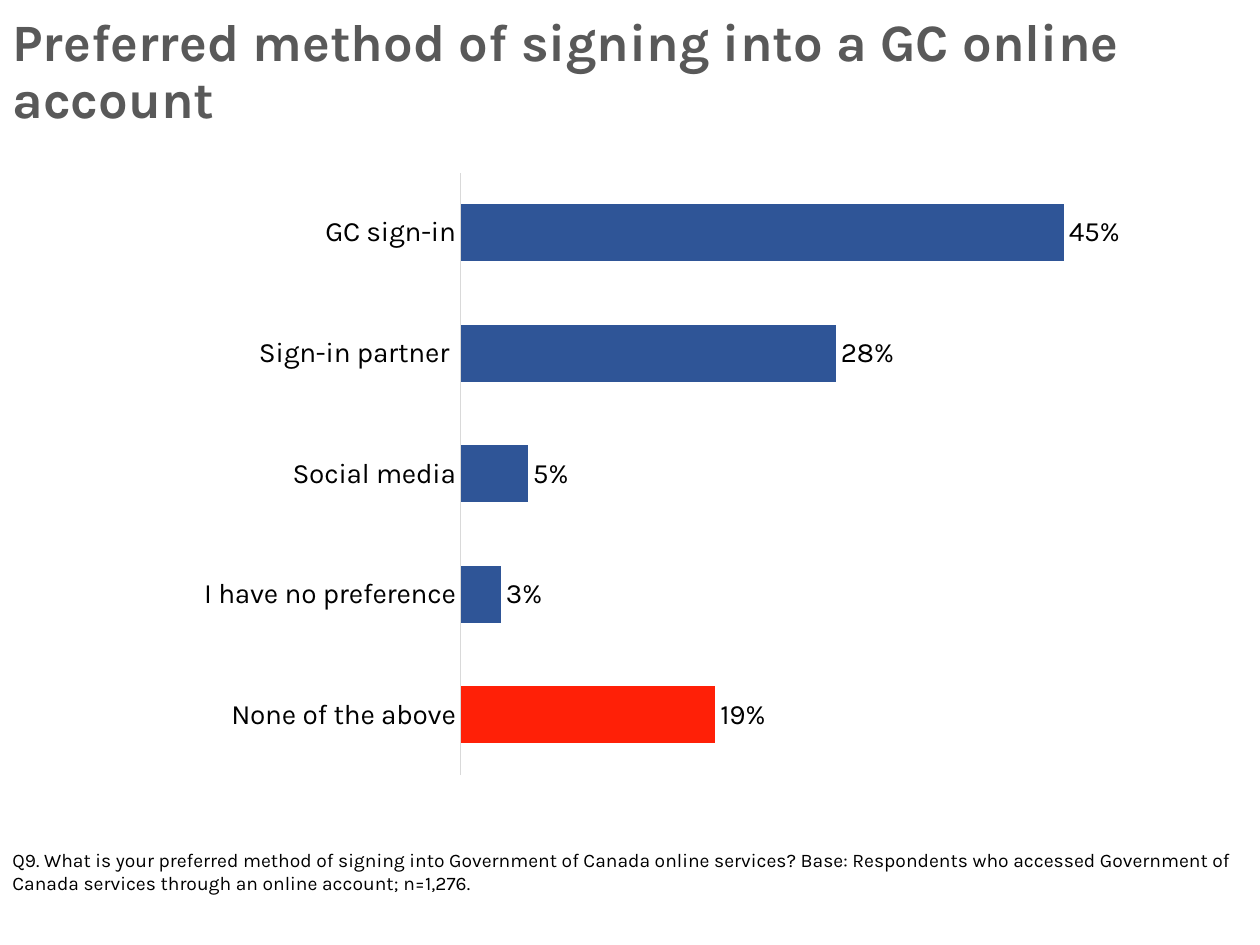
from lxml.etree import SubElement
from pptx import Presentation
from pptx.chart.data import CategoryChartData as ChartData
from pptx.dml.color import RGBColor as RGB
from pptx.enum.chart import XL_CHART_TYPE as Kind
from pptx.enum.chart import XL_LABEL_POSITION as Spot
from pptx.enum.chart import XL_TICK_MARK as Tick
from pptx.oxml.ns import qn
from pptx.util import Inches, Pt

# Content
TITLE = "Preferred method of signing into a GC online account"
NOTE = (
    "Q9. What is your preferred method of signing into Government of Canada "
    "online services? Base: Respondents who accessed Government of Canada "
    "services through an online account; n=1,276."
)
# Bottom bar first
SHARES = [
    ("None of the above", 0.19),
    ("I have no preference", 0.03),
    ("Social media", 0.05),
    ("Sign-in partner ", 0.28),
    ("GC sign-in", 0.45),
]
FONT = "Karla"
COLORS = {"text": "000000", "title": "595959", "axis": "D9D9D9",
          "bar": "2F5597", "none": "FF2007"}
PLOT = {"x": 0.38, "y": 0.12, "w": 0.55, "h": 0.88}
PLOT = {"x": 0.381, "y": 0.119, "w": 0.554, "h": 0.876}


def color(name):
    return RGB.from_string(COLORS[name])


def style(font, size, tint="text", bold=False):
    font.name, font.size, font.bold = FONT, Pt(size), bold
    font.color.rgb = color(tint)


def add_text(slide, text, top, height, size, tint="text", bold=False, gap=1.0):
    box = slide.shapes.add_textbox(0, Inches(top), Inches(10), Inches(height))
    box.text_frame.word_wrap = True
    para = box.text_frame.paragraphs[0]
    para.line_spacing = gap
    run = para.add_run()
    run.text = text
    style(run.font, size, tint, bold)


def set_plot(chart):
    """Fix the inner plot area as fractions of the chart frame."""
    area = chart._chartSpace.chart.plotArea
    for old in area.findall(qn("c:layout")):
        area.remove(old)
    layout = SubElement(area, qn("c:layout"))
    area.insert(0, layout)
    manual = SubElement(layout, qn("c:manualLayout"))
    parts = [("layoutTarget", "inner"), ("xMode", "edge"), ("yMode", "edge")]
    for tag, val in parts + list(PLOT.items()):
        SubElement(manual, qn(f"c:{tag}")).set("val", str(val))


def add_bars(slide):
    data = ChartData(number_format="0%")
    data.categories = [name for name, _ in SHARES]
    data.add_series("Series 1", [share for _, share in SHARES])
    chart = slide.shapes.add_chart(
        Kind.BAR_CLUSTERED, 0, Inches(0.72), Inches(9.6), Inches(5.46), data
    ).chart
    chart.has_title = chart.has_legend = False
    style(chart.font, 16)
    set_plot(chart)

    # Axes
    cats, vals = chart.category_axis, chart.value_axis
    cats.major_tick_mark = cats.minor_tick_mark = Tick.NONE
    cats.format.line.color.rgb = color("axis")
    cats.format.line.width = Pt(0.75)
    style(cats.tick_labels.font, 16)
    vals.visible = vals.has_major_gridlines = False
    vals.minimum_scale, vals.maximum_scale = 0, 0.5

    # Bars, with the last answer picked out
    plot = chart.plots[0]
    plot.gap_width, plot.vary_by_categories = 112, False
    bars = plot.series[0]
    for part, tint in [(bars, "bar"), (bars.points[0], "none")]:
        part.format.fill.solid()
        part.format.fill.fore_color.rgb = color(tint)

    # Labels
    labels = bars.data_labels
    labels.show_value = True
    labels.position = Spot.OUTSIDE_END
    labels.number_format, labels.number_format_is_linked = "0%", False
    style(labels.font, 16)


def main():
    deck = Presentation()
    deck.slide_width, deck.slide_height = Inches(10), Inches(7.5)
    slide = deck.slides.add_slide(deck.slide_layouts[6])
    add_text(slide, NOTE, 6.68, 0.47, 11)
    add_text(slide, TITLE, 0.08, 0.53, 30, tint="title", bold=True, gap=0.9)
    add_bars(slide)
    deck.save("out.pptx")


if __name__ == "__main__":
    main()
